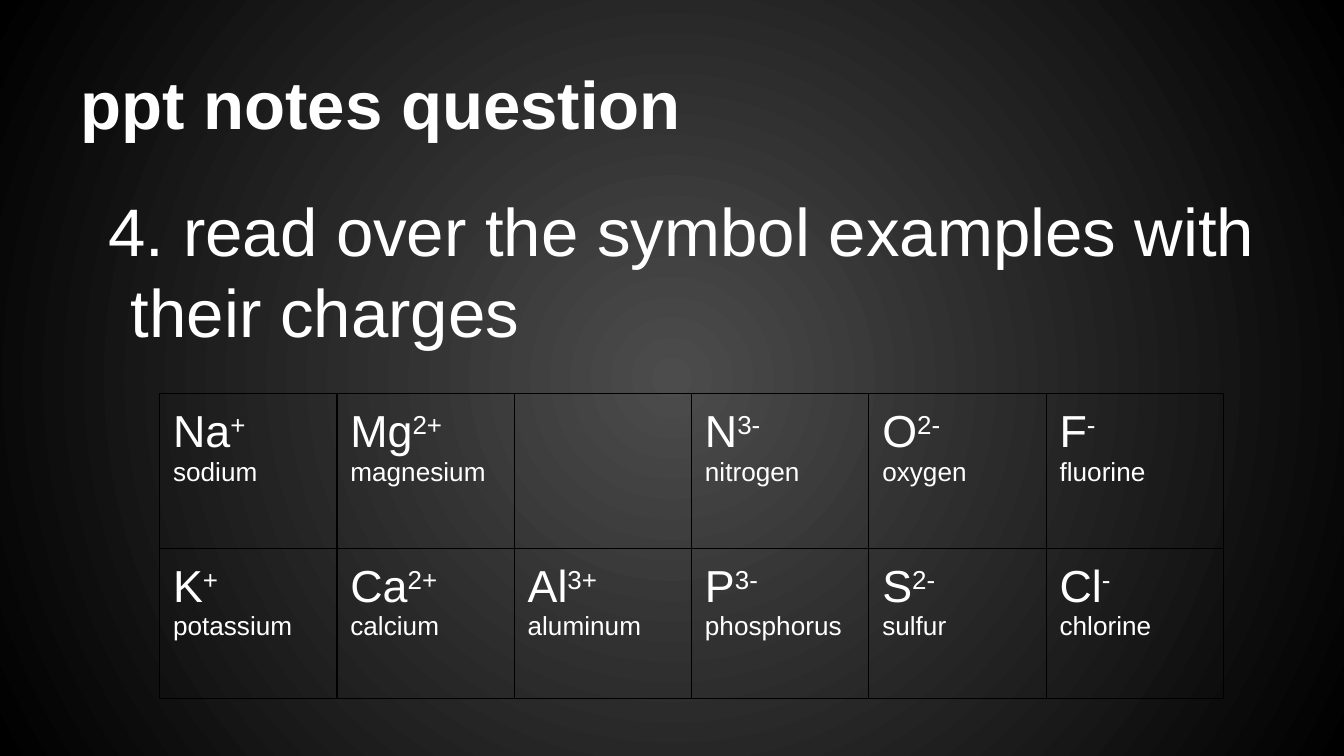
"""Build a slide of ion symbols and their charges."""
from lxml import etree
from pptx import Presentation
from pptx.dml.color import RGBColor
from pptx.enum.text import MSO_ANCHOR
from pptx.oxml.ns import qn
from pptx.util import Pt

BOTTOM, TOP = MSO_ANCHOR.BOTTOM, MSO_ANCHOR.TOP
WHITE = RGBColor(0xFF, 0xFF, 0xFF)
BLACK = RGBColor(0, 0, 0)
GRAY = RGBColor(0x4C, 0x4C, 0x4C)
FONT = "Arial"
INSET = Pt(7.2)

TITLE = "ppt notes question"
QUESTION = "4. read over the symbol examples with their charges"
IONS = [
    [("Na", "+", "sodium"), ("Mg", "2+", "magnesium"), None,
     ("N", "3-", "nitrogen"), ("O", "2-", "oxygen"), ("F", "-", "fluorine")],
    [("K", "+", "potassium"), ("Ca", "2+", "calcium"), ("Al", "3+", "aluminum"),
     ("P", "3-", "phosphorus"), ("S", "2-", "sulfur"), ("Cl", "-", "chlorine")],
]
COLUMN_WIDTH = 95
ROW_HEIGHTS = [83, 80]


def style(span, size, bold=False):
    span.font.name = FONT
    span.font.size = Pt(size)
    span.font.bold = bold
    span.font.color.rgb = WHITE


def set_insets(target):
    target.margin_left = target.margin_right = INSET
    target.margin_top = target.margin_bottom = INSET


def add_text(page, text, left, top, width, height, anchor, bold=False):
    box = page.shapes.add_textbox(Pt(left), Pt(top), Pt(width), Pt(height))
    frame = box.text_frame
    frame.word_wrap = True
    frame.vertical_anchor = anchor
    set_insets(frame)
    frame.text = text
    para = frame.paragraphs[0]
    style(para.runs[0], 36, bold)
    return para


def paint_background(page):
    fill = page.background.fill
    fill.gradient()
    for stop, color in zip(fill.gradient_stops, (GRAY, BLACK)):
        stop.color.rgb = color
    gradient = page.element.find(".//" + qn("a:gradFill"))
    gradient.remove(gradient.find(qn("a:lin")))
    circle = etree.SubElement(gradient, qn("a:path"), path="circle")
    etree.SubElement(circle, qn("a:fillToRect"), dict.fromkeys("ltrb", "50000"))


def add_borders(cell):
    properties = cell._tc.get_or_add_tcPr()
    for side in ("lnL", "lnR", "lnT", "lnB"):
        line = etree.SubElement(properties, qn("a:" + side), w=str(Pt(0.75)))
        solid = etree.SubElement(line, qn("a:solidFill"))
        etree.SubElement(solid, qn("a:srgbClr"), val=str(BLACK))


def fill_cell(cell, ion):
    add_borders(cell)
    cell.fill.background()
    set_insets(cell)
    if ion is None:
        return
    symbol, charge, name = ion
    cell.text = symbol + "\n" + name
    symbol_para, name_para = cell.text_frame.paragraphs
    charge_span = symbol_para.add_run()
    charge_span.text = charge
    for span in symbol_para.runs:
        style(span, 24)
    charge_span.font._element.set("baseline", "30000")
    style(name_para.runs[0], 14)


def add_ion_table(page):
    columns = len(IONS[0])
    table = page.shapes.add_table(
        len(IONS), columns, Pt(85.5), Pt(211),
        Pt(columns * COLUMN_WIDTH), Pt(sum(ROW_HEIGHTS))).table
    table.first_row = table.horz_banding = False
    for column in table.columns:
        column.width = Pt(COLUMN_WIDTH)
    for row, height, ions in zip(table.rows, ROW_HEIGHTS, IONS):
        row.height = Pt(height)
        for cell, ion in zip(row.cells, ions):
            fill_cell(cell, ion)


def main():
    deck = Presentation()
    deck.slide_width, deck.slide_height = Pt(720), Pt(405)
    page = deck.slides.add_slide(deck.slide_layouts[6])
    paint_background(page)
    add_text(page, TITLE, 36, 16.5, 648, 67.5, BOTTOM, bold=True)
    question = add_text(page, QUESTION, 36, 94.5, 648, 293, TOP)
    question.space_before = Pt(6)
    indents = question._p.get_or_add_pPr()
    indents.set("marL", str(Pt(27)))
    indents.set("indent", str(Pt(-12)))
    add_ion_table(page)
    deck.save("out.pptx")


if __name__ == "__main__":
    main()
